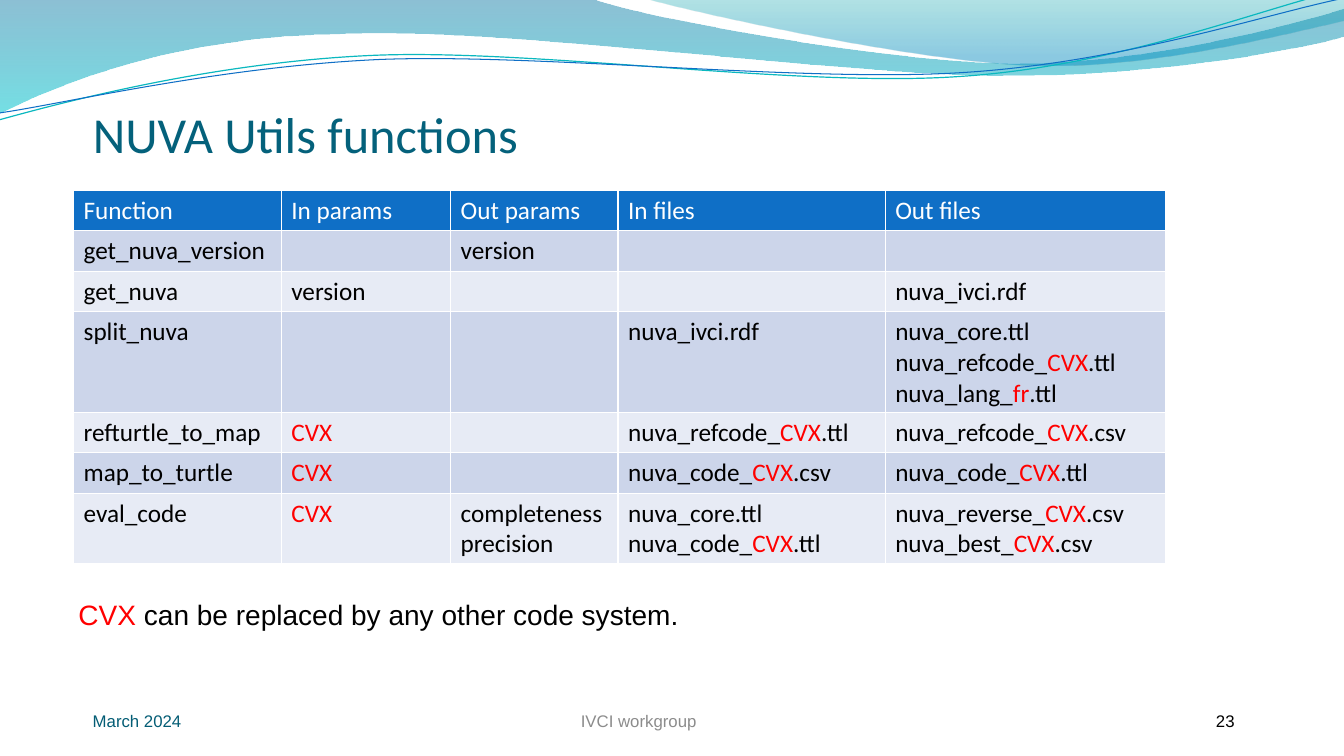
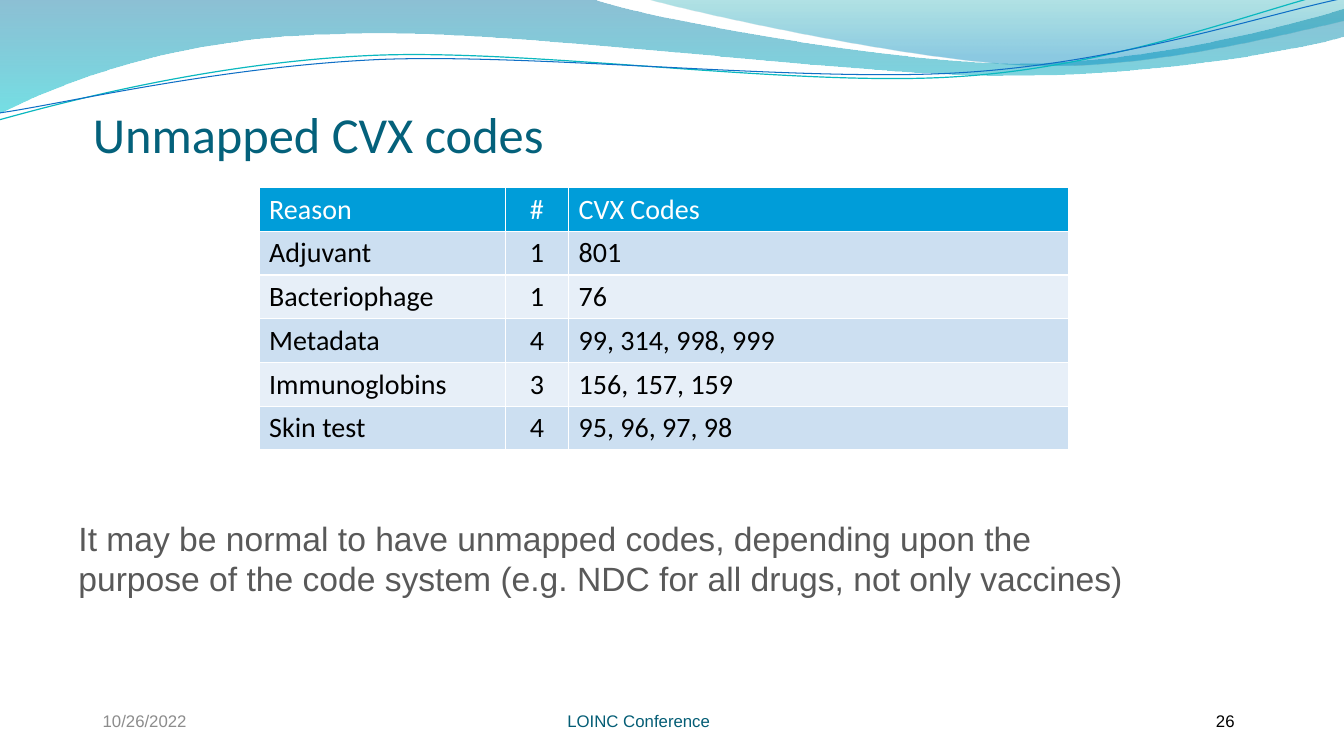
import math
from dataclasses import dataclass
from typing import Optional

from lxml import etree
from pptx import Presentation
from pptx import util as u
from pptx.dml.color import RGBColor
from pptx.enum import text
from pptx.oxml import ns

# Shared colours and fonts
BLACK = RGBColor(0x00, 0x00, 0x00)
WHITE = RGBColor(0xFF, 0xFF, 0xFF)
RED = RGBColor(0xFF, 0x00, 0x00)
GRAY = RGBColor(0x8C, 0x8C, 0x8C)
DARK_GRAY = RGBColor(0x59, 0x59, 0x59)
TITLE_TEAL = RGBColor(0x04, 0x61, 0x7B)
FOOTER_TEAL = RGBColor(0x04, 0x5D, 0x75)
BLUE = RGBColor(0x0F, 0x6F, 0xC6)
CYAN = RGBColor(0x00, 0x9D, 0xD9)
AQUA = RGBColor(0x0A, 0xB8, 0xBF)
HEADING_FONT, BODY_FONT = "Calibri", "Arial"

Point = tuple[float, float]
LEFT, CENTER = text.PP_ALIGN.LEFT, text.PP_ALIGN.CENTER
TOP, MIDDLE, BOTTOM = (text.MSO_ANCHOR.TOP, text.MSO_ANCHOR.MIDDLE,
                       text.MSO_ANCHOR.BOTTOM)
DEFAULT_INSETS = (0.1, 0.05, 0.1, 0.05)
NO_INSETS = (0, 0, 0, 0)


@dataclass(frozen=True)
class TextStyle:
    size: float
    color: RGBColor
    font: str = BODY_FONT
    align: text.PP_ALIGN = LEFT
    anchor: text.MSO_ANCHOR = TOP
    insets: tuple[float, float, float, float] = DEFAULT_INSETS
    level: int = 0


@dataclass(frozen=True)
class GradientStop:
    position: float
    color: RGBColor
    opacity: int


@dataclass(frozen=True)
class Wave:
    """Segments hold one point for a line, three for a Bezier curve."""
    start: Point
    segments: list[tuple[Point, ...]]
    gradient: tuple[GradientStop, ...] = ()
    line_color: Optional[RGBColor] = None
    line_width: float = 0
    center: Point = (0, 0)
    rotation: float = 0


@dataclass(frozen=True)
class TableDesign:
    left: float
    top: float
    height: float
    columns: list[float]
    size: float
    header: RGBColor
    bands: tuple[RGBColor, RGBColor]
    centered_columns: tuple[int, ...] = ()


@dataclass(frozen=True)
class Footer:
    date: str
    event: str
    number: str
    date_style: TextStyle
    event_style: TextStyle


TITLE_STYLE = TextStyle(36, TITLE_TEAL, HEADING_FONT, anchor=BOTTOM,
                        insets=(0, 0.05, 0, 0))
NUMBER_STYLE = TextStyle(12, BLACK, anchor=MIDDLE, insets=NO_INSETS, level=1)

WAVES = [
    Wave((0, 0), [
        ((5.87, -0.01),),
        ((6.34, 0.17), (8.85, 0.63), (10.11, 0.63)),
        ((11.38, 0.63), (12.78, 0.26), (13.33, 0.09)),
        ((13.35, 0.36),),
        ((13.11, 0.44), (11.6, 0.76), (9.94, 0.75)),
        ((8.29, 0.75), (5.09, 0.28), (3.43, 0.34)),
        ((1.72, 0.36), (0.61, 0.83), (-0.01, 1.13)),
        ((0, 0),),
    ], gradient=(GradientStop(0, RGBColor(0x00, 0x74, 0xA1), 45),
                 GradientStop(1, RGBColor(0x00, 0xC6, 0xCF), 55))),
    Wave((6.39, -0.01), [
        ((6.79, 0.11), (9.09, 0.62), (10.25, 0.65)),
        ((11.41, 0.69), (12.82, 0.32), (13.33, 0.21)),
        ((13.33, 0),),
        ((6.39, -0.01),),
    ], gradient=(GradientStop(0, RGBColor(0x00, 0xA1, 0xA9), 30),
                 GradientStop(0.8, RGBColor(0x00, 0x8B, 0xBF), 45))),
    Wave((-0.01, 1.19), [
        ((0.64, 1.01), (2.11, 0.62), (3.69, 0.55)),
        ((5.27, 0.48), (7.9, 0.87), (9.5, 0.76)),
        ((11.1, 0.66), (12.52, 0.08), (13.31, -0.1)),
    ], line_color=AQUA, line_width=0.85, center=(6.65, 0.57), rotation=-2.7),
    Wave((0, 1.12), [
        ((0.63, 1.03), (2.18, 0.66), (3.78, 0.59)),
        ((5.37, 0.53), (7.96, 0.82), (9.55, 0.72)),
        ((11.15, 0.62), (12.55, 0.14), (13.34, -0.02)),
    ], line_color=BLUE, line_width=0.75, center=(6.67, 0.59), rotation=-2.7),
]

# Table contents: red between asterisks, \v breaks a line in a paragraph
FUNCTION_ROWS = [
    ["Function", "In params", "Out params", "In files", "Out files"],
    ["get_nuva_version", "", "version", "", ""],
    ["get_nuva", "version", "", "", "nuva_ivci.rdf"],
    ["split_nuva", "", "", "nuva_ivci.rdf",
     "nuva_core.ttl\vnuva_refcode_*CVX*.ttl\nnuva_lang_*fr*.ttl"],
    ["refturtle_to_map", "*CVX*", "", "nuva_refcode_*CVX*.ttl",
     "nuva_refcode_*CVX*.csv"],
    ["map_to_turtle", "*CVX*", "", "nuva_code_*CVX*.csv",
     "nuva_code_*CVX*.ttl"],
    ["eval_code", "*CVX*", "completeness\vprecision",
     "nuva_core.ttl\nnuva_code_*CVX*.ttl",
     "nuva_reverse_*CVX*.csv\vnuva_best_*CVX*.csv"],
]
REASON_ROWS = [
    ["Reason", "#", "CVX Codes"],
    ["Adjuvant", "1", "801"],
    ["Bacteriophage", "1", "76"],
    ["Metadata", "4", "99, 314, 998, 999"],
    ["Immunoglobins", "3", "156, 157, 159"],
    ["Skin test", "4", "95, 96, 97, 98"],
]
ROW_HEIGHT = 0.4


def write_line(paragraph, line: str, style: TextStyle) -> None:
    for index, part in enumerate(line.split("*")):
        for piece_index, piece in enumerate(part.split("\v")):
            if piece_index:
                paragraph.add_line_break()
            if not piece:
                continue
            run = paragraph.add_run()
            run.text = piece
            run.font.size = u.Pt(style.size)
            run.font.name = style.font
            run.font.bold = False
            run.font.color.rgb = RED if index % 2 else style.color


def write_text(text_frame, content: str, style: TextStyle) -> None:
    for index, line in enumerate(content.split("\n")):
        paragraph = (text_frame.add_paragraph() if index
                     else text_frame.paragraphs[0])
        paragraph.alignment = style.align
        if style.level:
            paragraph.level = style.level
            properties = paragraph._p.get_or_add_pPr()
            properties.set("marL", str(u.Inches(0.5 * style.level)))
            properties.set("indent", "0")
        write_line(paragraph, line, style)


def add_text(slide, left: float, top: float, width: float, height: float,
             content: str, style: TextStyle) -> None:
    box = slide.shapes.add_textbox(u.Inches(left), u.Inches(top),
                                   u.Inches(width), u.Inches(height))
    frame = box.text_frame
    frame.word_wrap = True
    frame.vertical_anchor = style.anchor
    (frame.margin_left, frame.margin_top,
     frame.margin_right, frame.margin_bottom) = map(u.Inches, style.insets)
    write_text(frame, content, style)


def unrotate(point: Point, wave: Wave) -> tuple[int, int]:
    """Give the place of a point before the wave is rotated."""
    angle = math.radians(-wave.rotation)
    x, y = point[0] - wave.center[0], point[1] - wave.center[1]
    return (u.Inches(wave.center[0] + x * math.cos(angle) - y * math.sin(angle)),
            u.Inches(wave.center[1] + x * math.sin(angle) + y * math.cos(angle)))


def add_wave(slide, wave: Wave) -> None:
    points = [unrotate(p, wave) for segment in wave.segments for p in segment]
    builder = slide.shapes.build_freeform(*unrotate(wave.start, wave))
    builder.add_line_segments(points, close=bool(wave.gradient))
    shape = builder.convert_to_shape()
    shape.shadow.inherit = False
    shape.rotation = wave.rotation
    properties = shape.element.spPr

    # Join each three curve points into one Bezier segment
    steps = iter(list(properties.iter(ns.qn("a:lnTo"))))
    for segment in wave.segments:
        parts = [next(steps) for _ in segment]
        if len(parts) == 3:
            curve = etree.Element(ns.qn("a:cubicBezTo"))
            parts[0].addprevious(curve)
            for part in parts:
                curve.append(part[0])
                part.getparent().remove(part)

    if not wave.gradient:
        shape.fill.background()
        shape.line.color.rgb = wave.line_color
        shape.line.width = u.Pt(wave.line_width)
        return
    shape.line.fill.background()
    shape.fill.gradient()
    shape.fill.gradient_angle = 270
    for target, stop in zip(shape.fill.gradient_stops, wave.gradient):
        target.position = stop.position
        target.color.rgb = stop.color
    for color, stop in zip(properties.iter(ns.qn("a:srgbClr")), wave.gradient):
        alpha = etree.SubElement(color, ns.qn("a:alpha"))
        alpha.set("val", str(stop.opacity * 1000))


def add_table(slide, rows: list[list[str]], design: TableDesign) -> None:
    frame = slide.shapes.add_table(
        len(rows), len(design.columns), u.Inches(design.left),
        u.Inches(design.top), u.Inches(sum(design.columns)),
        u.Inches(ROW_HEIGHT * len(rows)))
    table = frame.table
    for column, width in zip(table.columns, design.columns):
        column.width = u.Inches(width)
    frame.height = u.Inches(design.height)
    for row_index, row in enumerate(rows):
        is_header = row_index == 0
        fill = design.header if is_header else design.bands[(row_index - 1) % 2]
        for column_index, content in enumerate(row):
            cell = table.cell(row_index, column_index)
            cell.fill.solid()
            cell.fill.fore_color.rgb = fill
            align = CENTER if column_index in design.centered_columns else LEFT
            write_text(cell.text_frame, content,
                       TextStyle(design.size, WHITE if is_header else BLACK,
                                 HEADING_FONT, align))


def add_base_slide(presentation, title: str, footer: Footer):
    """Add a slide with the waves, title and footer."""
    slide = presentation.slides.add_slide(presentation.slide_layouts[6])
    for wave in WAVES:
        add_wave(slide, wave)
    add_text(slide, 0.92, 0.77, 11.75, 0.85, title, TITLE_STYLE)
    add_text(slide, 0.92, 6.95, 3, 0.4, footer.date, footer.date_style)
    add_text(slide, 3.89, 6.95, 4.89, 0.4, footer.event, footer.event_style)
    add_text(slide, 11.56, 6.95, 1.11, 0.4, footer.number, NUMBER_STYLE)
    return slide


def add_functions_slide(presentation) -> None:
    footer = Footer("March 2024", "IVCI workgroup", "23",
                    TextStyle(12, FOOTER_TEAL, anchor=MIDDLE, insets=NO_INSETS),
                    TextStyle(12, GRAY, align=CENTER, anchor=MIDDLE))
    slide = add_base_slide(presentation, "NUVA Utils functions", footer)
    add_table(slide, FUNCTION_ROWS, TableDesign(
        0.73, 1.89, 3.73, [2.06, 1.68, 1.66, 2.65, 2.78], 18, BLUE,
        (RGBColor(0xCC, 0xD5, 0xEA), RGBColor(0xE7, 0xEB, 0xF5))))
    add_text(slide, 0.68, 5.88, 6.2, 0.44,
             "*CVX* can be replaced by any other code system.",
             TextStyle(20, BLACK))


def add_unmapped_slide(presentation) -> None:
    footer = Footer("10/26/2022", "LOINC Conference", "26",
                    TextStyle(12, GRAY, anchor=MIDDLE),
                    TextStyle(12, FOOTER_TEAL, align=CENTER, anchor=MIDDLE,
                              insets=NO_INSETS))
    slide = add_base_slide(presentation, "Unmapped CVX codes", footer)
    add_table(slide, REASON_ROWS, TableDesign(
        2.57, 1.86, 2.6, [2.44, 0.63, 4.96], 20, CYAN,
        (RGBColor(0xCC, 0xDF, 0xF1), RGBColor(0xE7, 0xEF, 0xF8)), (1,)))
    add_text(slide, 0.68, 5.09, 10.64, 0.91,
             "It may be normal to have unmapped codes, depending upon the "
             "purpose of the code system (e.g. NDC for all drugs, not only "
             "vaccines)", TextStyle(24, DARK_GRAY))


def main() -> None:
    presentation = Presentation()
    presentation.slide_width, presentation.slide_height = u.Inches(13.33), u.Inches(7.5)
    add_functions_slide(presentation)
    add_unmapped_slide(presentation)
    presentation.save("out.pptx")


if __name__ == "__main__":
    main()
